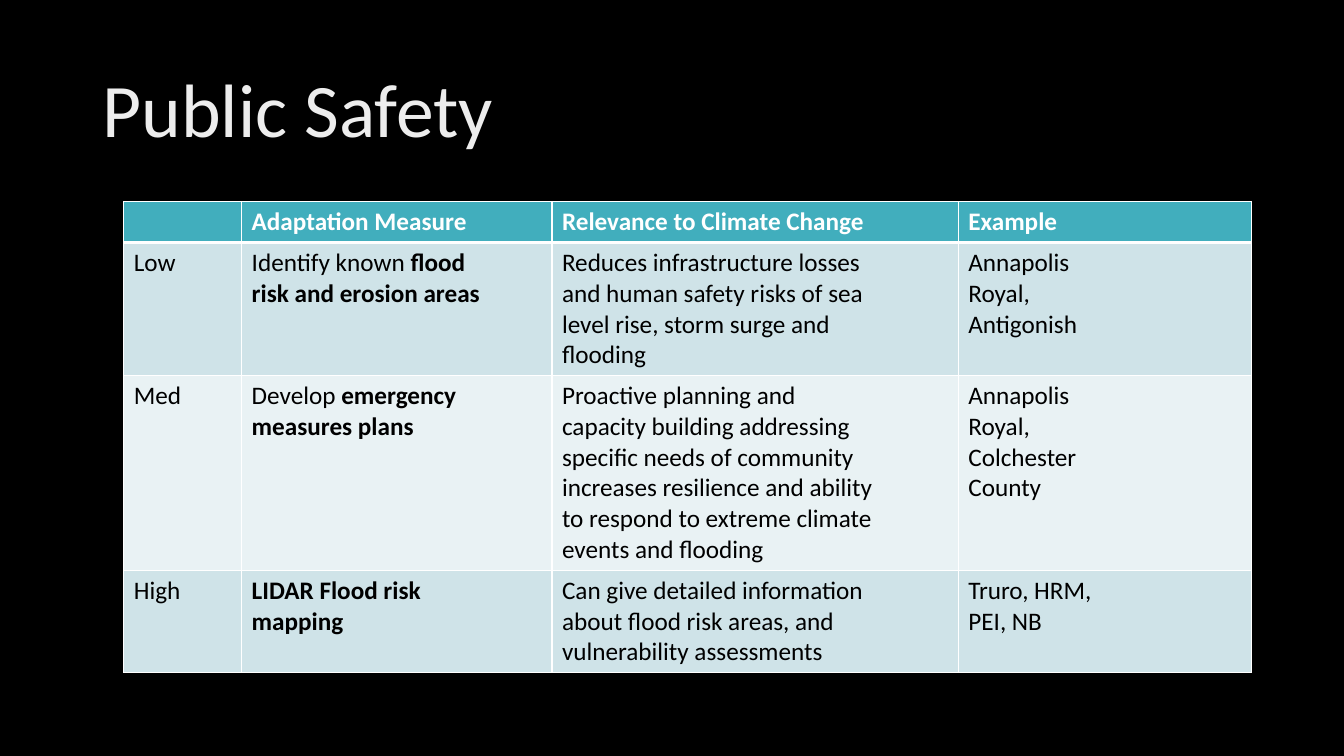
from lxml import etree
from pptx import Presentation
from pptx import util as u
from pptx.dml.color import RGBColor
from pptx.enum import text
from pptx.oxml.ns import qn

COLOURS = {
    "background": "000000", "title": "EDEDED", "header": "41AEBD",
    "odd": "CFE3E8", "even": "E9F2F4", "light": "FFFFFF", "dark": "000000",
}
FONT = "Calibri"

# Lines of a cell are separate paragraphs; ** switches bold on and off
ROWS = [
    ["", "**Adaptation Measure**", "**Relevance to Climate Change**", "**Example**"],
    ["Low",
     "Identify known **flood**\n**risk and erosion areas**",
     "Reduces infrastructure losses\nand human safety risks of sea\n"
     "level rise, storm surge and\nflooding",
     "Annapolis\nRoyal,\nAntigonish"],
    ["Med",
     "Develop **emergency**\n**measures plans**",
     "Proactive planning and\ncapacity building addressing\n"
     "specific needs of community\nincreases resilience and ability\n"
     "to respond to extreme climate\nevents and flooding",
     "Annapolis\nRoyal,\nColchester\nCounty"],
    ["High",
     "**LIDAR Flood risk**\n**mapping**",
     "Can give detailed information\nabout flood risk areas, and\n"
     "vulnerability assessments",
     "Truro, HRM,\nPEI, NB"],
]
COLUMN_WIDTHS = [2.97, 7.82, 10.24, 7.39]
LINE_HEIGHT, CELL_PADDING = 0.77, 0.26


def style(font, size, colour, bold=False):
    font.name, font.size, font.bold = FONT, u.Pt(size), bold
    font.color.rgb = RGBColor.from_string(COLOURS[colour])


def add_border(cell, side, points):
    line = etree.SubElement(cell._tc.get_or_add_tcPr(), qn("a:" + side),
                            w=str(u.Pt(points)))
    fill = etree.SubElement(line, qn("a:solidFill"))
    etree.SubElement(fill, qn("a:srgbClr"), val=COLOURS["light"])


# Slide and background
deck = Presentation()
deck.slide_width, deck.slide_height = u.Cm(33.87), u.Cm(19.05)
page = deck.slides.add_slide(deck.slide_layouts[5])
page.background.fill.solid()
page.background.fill.fore_color.rgb = RGBColor.from_string(COLOURS["background"])

# Title
title = page.shapes.title
title.left, title.top = u.Cm(2.33), u.Cm(1.01)
title.width, title.height = u.Cm(29.21), u.Cm(3.68)
frame = title.text_frame
frame.text = "Public Safety"
frame.word_wrap = True
frame.auto_size = text.MSO_AUTO_SIZE.NONE
frame.vertical_anchor = text.MSO_ANCHOR.MIDDLE
para = frame.paragraphs[0]
para.alignment = text.PP_ALIGN.LEFT
para.line_spacing = 0.9
style(para.runs[0].font, 54, "title")

# Table, with each row as tall as its longest cell
heights = [max(cell.count("\n") + 1 for cell in row) * LINE_HEIGHT + CELL_PADDING
           for row in ROWS]
table = page.shapes.add_table(
    len(ROWS), len(COLUMN_WIDTHS), u.Cm(3.12), u.Cm(5.08),
    u.Cm(sum(COLUMN_WIDTHS)), u.Cm(sum(heights))).table
for column, width in zip(table.columns, COLUMN_WIDTHS):
    column.width = u.Cm(width)

for r, (row, height) in enumerate(zip(ROWS, heights)):
    table.rows[r].height = u.Cm(height)
    band = "header" if r == 0 else "odd" if r % 2 else "even"
    for c, wording in enumerate(row):
        cell = table.cell(r, c)

        # Borders: a thick rule under the header, thin lines elsewhere
        for side in ("lnL", "lnR", "lnT", "lnB"):
            thick = (r, side) in ((0, "lnB"), (1, "lnT"))
            add_border(cell, side, 3 if thick else 1)
        cell.fill.solid()
        cell.fill.fore_color.rgb = RGBColor.from_string(COLOURS[band])

        # Wording
        for n, line in enumerate(wording.split("\n")):
            para = (cell.text_frame.add_paragraph() if n
                    else cell.text_frame.paragraphs[0])
            for k, piece in enumerate(line.split("**")):
                if piece:
                    span = para.add_run()
                    span.text = piece
                    style(span.font, 18, "dark" if r else "light", k % 2 == 1)

deck.save("out.pptx")
